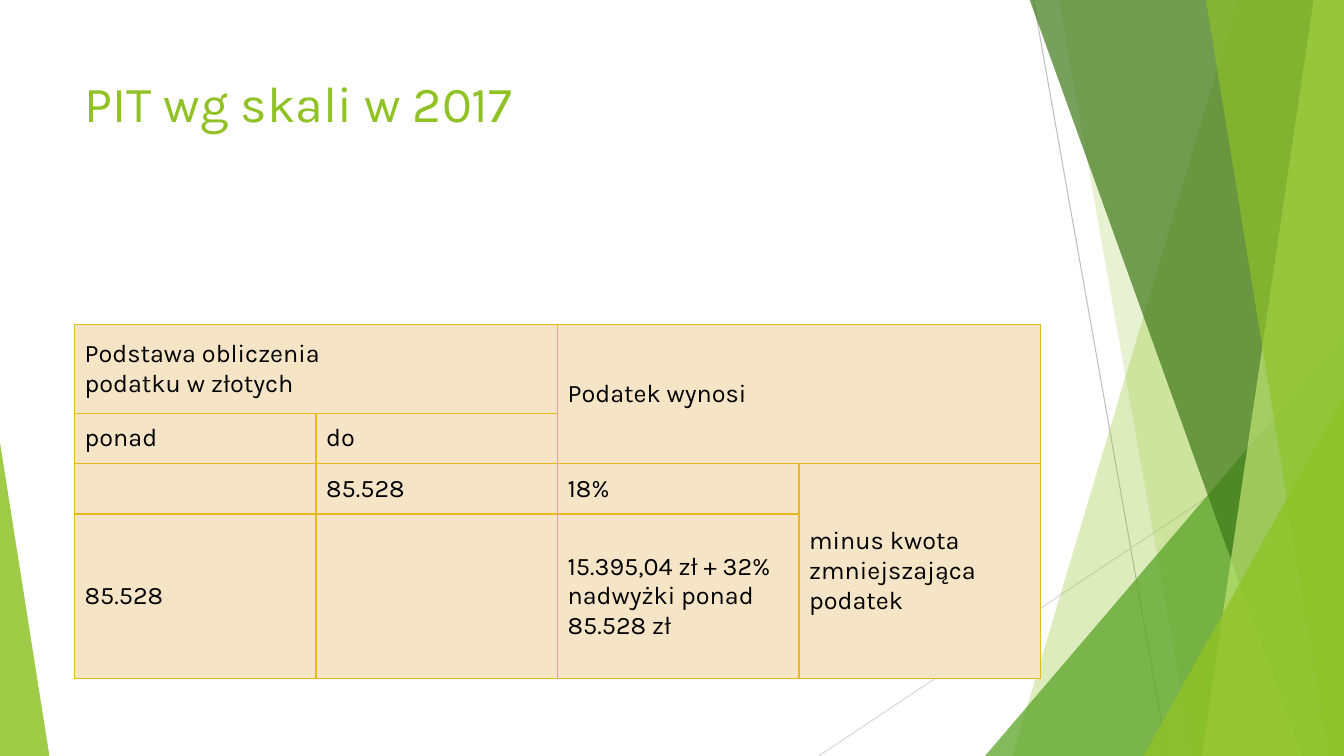
from lxml import etree
from pptx import Presentation
from pptx.dml.color import RGBColor
from pptx.enum.shapes import MSO_CONNECTOR, MSO_SHAPE
from pptx.enum.text import MSO_ANCHOR, PP_ALIGN
from pptx.oxml.ns import qn
from pptx.util import Inches, Pt

COLORS = {
    "lime": "90C226", "green": "54A021", "forest": "3F7819", "pale": "C0E474",
    "gray": "BFBFBF", "light_gray": "D9D9D9",
    "cell": "F5E4C5", "border": "E6B91E", "text": "000000",
}
FONT = "Karla"
SLIDE_W, SLIDE_H = 13.33, 7.5
BLEED = -0.01

ROW_HEIGHTS = [0.88, 0.5, 0.5, 1.63]
COLUMN_COUNT = 4
CELL_TEXTS = {
    (0, 0): "Podstawa obliczenia\npodatku w złotych",
    (0, 2): "Podatek wynosi",
    (1, 0): "ponad",
    (1, 1): "do",
    (2, 1): "85.528",
    (2, 2): "18%",
    (2, 3): "minus kwota zmniejszająca podatek",
    (3, 0): "85.528",
    (3, 2): "15.395,04 zł + 32% nadwyżki ponad 85.528 zł",
}
MERGES = [((0, 0), (0, 1)), ((0, 2), (1, 3)), ((2, 3), (3, 3))]


def rgb(name):
    return RGBColor.from_string(COLORS[name])


def paint(shape, color, opacity):
    """Fill without outline or shadow; opacity is a percentage."""
    shape.shadow.inherit = False
    shape.line.fill.background()
    shape.fill.solid()
    shape.fill.fore_color.rgb = rgb(color)
    srgb = shape._element.spPr.find(qn("a:solidFill")).find(qn("a:srgbClr"))
    etree.SubElement(srgb, qn("a:alpha")).set("val", str(opacity * 1000))


def format_runs(text_frame, size, color):
    for paragraph in text_frame.paragraphs:
        paragraph.alignment = PP_ALIGN.LEFT
        for run in paragraph.runs:
            run.font.name = FONT
            run.font.size = Pt(size)
            run.font.color.rgb = rgb(color)


def add_thin_line(slide, start, end, color):
    line = slide.shapes.add_connector(
        MSO_CONNECTOR.STRAIGHT, *(Inches(v) for v in (*start, *end)))
    line.line.color.rgb = rgb(color)
    line.line.width = Pt(0.75)
    etree.SubElement(line._element.spPr, qn("a:effectLst"))


def add_band(slide, top_x, bottom_x, color, opacity):
    """Slanted band reaching from its left edge to the slide's right side."""
    corners = [(SLIDE_W, BLEED), (SLIDE_W, SLIDE_H), (bottom_x, SLIDE_H)]
    outline = slide.shapes.build_freeform(Inches(top_x), Inches(BLEED))
    outline.add_line_segments([(Inches(x), Inches(y)) for x, y in corners])
    paint(outline.convert_to_shape(), color, opacity)


def add_corner(slide, left, top, width, apex, color, opacity):
    """Triangle standing on the bottom edge; apex 0 is left, 1 is right."""
    triangle = slide.shapes.add_shape(
        MSO_SHAPE.ISOSCELES_TRIANGLE, Inches(left), Inches(top),
        Inches(width), Inches(SLIDE_H - top))
    triangle.adjustments[0] = apex
    paint(triangle, color, opacity)


def add_decoration(slide):
    add_thin_line(slide, (10.25, 0), (11.58, SLIDE_H), "gray")
    add_thin_line(slide, (SLIDE_W, 4.03), (8.12, SLIDE_H), "light_gray")
    add_band(slide, 12.28, 10.04, "lime", 30)
    add_band(slide, 10.5, 11.83, "lime", 20)
    add_corner(slide, 9.77, 3.33, 3.56, 1, "green", 72)
    add_band(slide, 10.21, 12.91, "forest", 70)
    add_band(slide, 13.03, 11.92, "pale", 70)
    add_band(slide, 11.96, 13.18, "lime", 65)
    add_corner(slide, 11.34, 3.93, 1.99, 1, "lime", 80)
    add_corner(slide, 0, 4.39, 0.49, 0, "lime", 85)


def add_title(slide, left, top, width, height):
    title = slide.shapes.title
    title.left, title.top = Inches(left), Inches(top)
    title.width, title.height = Inches(width), Inches(height)
    title.text_frame.text = "PIT wg skali w 2017"
    title.text_frame.vertical_anchor = MSO_ANCHOR.TOP
    format_runs(title.text_frame, 36, "lime")


def add_borders(cell):
    properties = cell._tc.get_or_add_tcPr()
    for index, side in enumerate(("lnL", "lnR", "lnT", "lnB")):
        border = etree.Element(qn(f"a:{side}"), w=str(Pt(1)))
        fill = etree.SubElement(border, qn("a:solidFill"))
        etree.SubElement(fill, qn("a:srgbClr"), val=COLORS["border"])
        properties.insert(index, border)


def add_tax_table(slide, left, top, width):
    table = slide.shapes.add_table(
        len(ROW_HEIGHTS), COLUMN_COUNT, Inches(left), Inches(top),
        Inches(width), Inches(sum(ROW_HEIGHTS))).table
    for column in table.columns:
        column.width = Inches(width / COLUMN_COUNT)
    for row, height in zip(table.rows, ROW_HEIGHTS):
        row.height = Inches(height)
    for first, last in MERGES:
        table.cell(*first).merge(table.cell(*last))
    for cell in table.iter_cells():
        cell.fill.solid()
        cell.fill.fore_color.rgb = rgb("cell")
        cell.vertical_anchor = MSO_ANCHOR.MIDDLE
        add_borders(cell)
    for position, text in CELL_TEXTS.items():
        text_frame = table.cell(*position).text_frame
        text_frame.text = text
        format_runs(text_frame, 18, "text")


def main():
    presentation = Presentation()
    presentation.slide_width = Inches(SLIDE_W)
    presentation.slide_height = Inches(SLIDE_H)
    slide = presentation.slides.add_slide(presentation.slide_layouts[5])
    add_decoration(slide)
    add_title(slide, 0.74, 0.67, 9.4, 1.44)
    add_tax_table(slide, 0.74, 3.22, 9.58)
    presentation.save("out.pptx")


if __name__ == "__main__":
    main()
